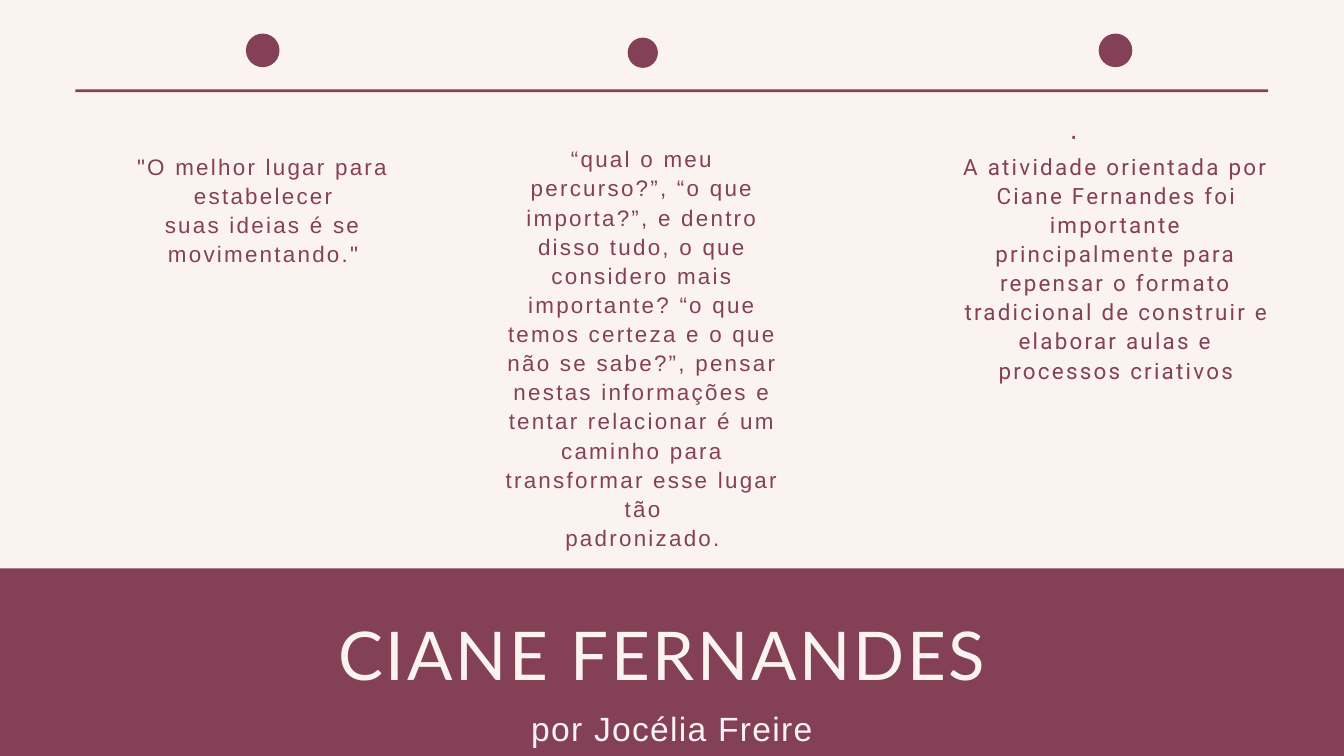
from dataclasses import dataclass

import pptx
import pptx.dml.color
import pptx.enum.shapes
import pptx.enum.text
import pptx.util

Inches = pptx.util.Inches
Pt = pptx.util.Pt


@dataclass(frozen=True)
class Theme:
    plum: str = "844057"
    cream: str = "FAF3F0"
    sans: str = "Arial"
    title_font: str = "Lato"
    note_font: str = "Roboto"
    title: float = 72
    author: float = 36
    bullet: float = 30
    body: float = 24


THEME = Theme()


@dataclass(frozen=True)
class TextBlock:
    left: float
    top: float
    width: float
    height: float
    paragraphs: tuple[str, ...]
    size: float
    leading: float
    tracking: float
    font: str = THEME.sans
    color: str = THEME.plum


@dataclass(frozen=True)
class Milestone:
    dot_left: float
    dot_top: float
    diameter: float
    left: float
    top: float
    width: float
    height: float
    paragraphs: tuple[str, ...]
    font: str = THEME.sans


def rgb(color: str) -> pptx.dml.color.RGBColor:
    return pptx.dml.color.RGBColor.from_string(color)


def draw_shape(slide, kind, left: float, top: float, width: float,
               height: float, color: str) -> None:
    shape = slide.shapes.add_shape(
        kind, Inches(left), Inches(top), Inches(width), Inches(height))
    shape.shadow.inherit = False
    shape.fill.solid()
    shape.fill.fore_color.rgb = rgb(color)
    shape.line.fill.background()


def draw_text(slide, block: TextBlock) -> None:
    box = slide.shapes.add_textbox(
        Inches(block.left), Inches(block.top),
        Inches(block.width), Inches(block.height))
    frame = box.text_frame
    frame_format = {
        "word_wrap": True, "margin_left": 0, "margin_right": 0,
        "margin_top": 0, "margin_bottom": 0,
    }
    for name, value in frame_format.items():
        setattr(frame, name, value)

    font_format = {"name": block.font, "size": Pt(block.size)}
    for index, words in enumerate(block.paragraphs):
        paragraph = frame.add_paragraph() if index else frame.paragraphs[0]
        paragraph.alignment = pptx.enum.text.PP_ALIGN.CENTER
        paragraph.line_spacing = Pt(block.leading)
        run = paragraph.add_run()
        run.text = words
        for name, value in font_format.items():
            setattr(run.font, name, value)
        run.font.color.rgb = rgb(block.color)
        # Letter spacing, in hundredths of a point
        run._r.get_or_add_rPr().set("spc", str(round(block.tracking * 100)))


def draw_milestone(slide, item: Milestone) -> None:
    draw_shape(slide, pptx.enum.shapes.MSO_SHAPE.OVAL, item.dot_left,
               item.dot_top, item.diameter, item.diameter, THEME.plum)
    draw_text(slide, TextBlock(
        item.left, item.top, item.width, item.height, item.paragraphs,
        THEME.body, 31.2, 2.4, item.font))


MILESTONES = (
    Milestone(3.66, 0.5, 0.5, 1.64, 2.24, 4.55, 1.73, (
        "\"O melhor lugar para estabelecer",
        "suas ideias é se movimentando.\"",
    )),
    Milestone(9.34, 0.56, 0.45, 7.5, 2.13, 4.12, 6.07, (
        "“qual o meu percurso?”, “o que importa?”, e dentro disso tudo, "
        "o que considero mais importante? “o que temos certeza e o que "
        "não se sabe?”, pensar nestas informações e tentar relacionar é "
        "um caminho para transformar esse lugar tão",
        "padronizado.",
    )),
    Milestone(16.35, 0.5, 0.5, 14.33, 2.24, 4.55, 3.47, (
        "A atividade orientada por Ciane Fernandes foi",
        "importante principalmente para repensar o formato tradicional "
        "de construir e",
        "elaborar aulas e processos criativos",
    ), THEME.note_font),
)

HEADINGS = (
    TextBlock(4, 10.54, 12, 0.59, ("por Jocélia Freire",),
              THEME.author, 43.2, 1.4, color=THEME.cream),
    TextBlock(2.82, 9.12, 14.06, 1.2, ("CIANE FERNANDES",),
              THEME.title, 86.4, 2.9, THEME.title_font, THEME.cream),
    # Lone bullet above the third note
    TextBlock(15.73, 1.7, 0.5, 0.54, ("·",), THEME.bullet, 39, 3),
)


def main() -> None:
    deck = pptx.Presentation()
    deck.slide_width, deck.slide_height = Inches(20), Inches(11.25)
    slide = deck.slides.add_slide(deck.slide_layouts[6])

    # Plum background, cream panel and timeline rule
    slide.background.fill.solid()
    slide.background.fill.fore_color.rgb = rgb(THEME.plum)
    rectangle = pptx.enum.shapes.MSO_SHAPE.RECTANGLE
    draw_shape(slide, rectangle, 0, 0, 20, 8.46, THEME.cream)
    draw_shape(slide, rectangle, 1.12, 1.33, 17.75, 0.04, THEME.plum)

    # Title, author and bullet
    for heading in HEADINGS:
        draw_text(slide, heading)

    # Timeline notes
    for milestone in MILESTONES:
        draw_milestone(slide, milestone)

    deck.save("out.pptx")


if __name__ == "__main__":
    main()
